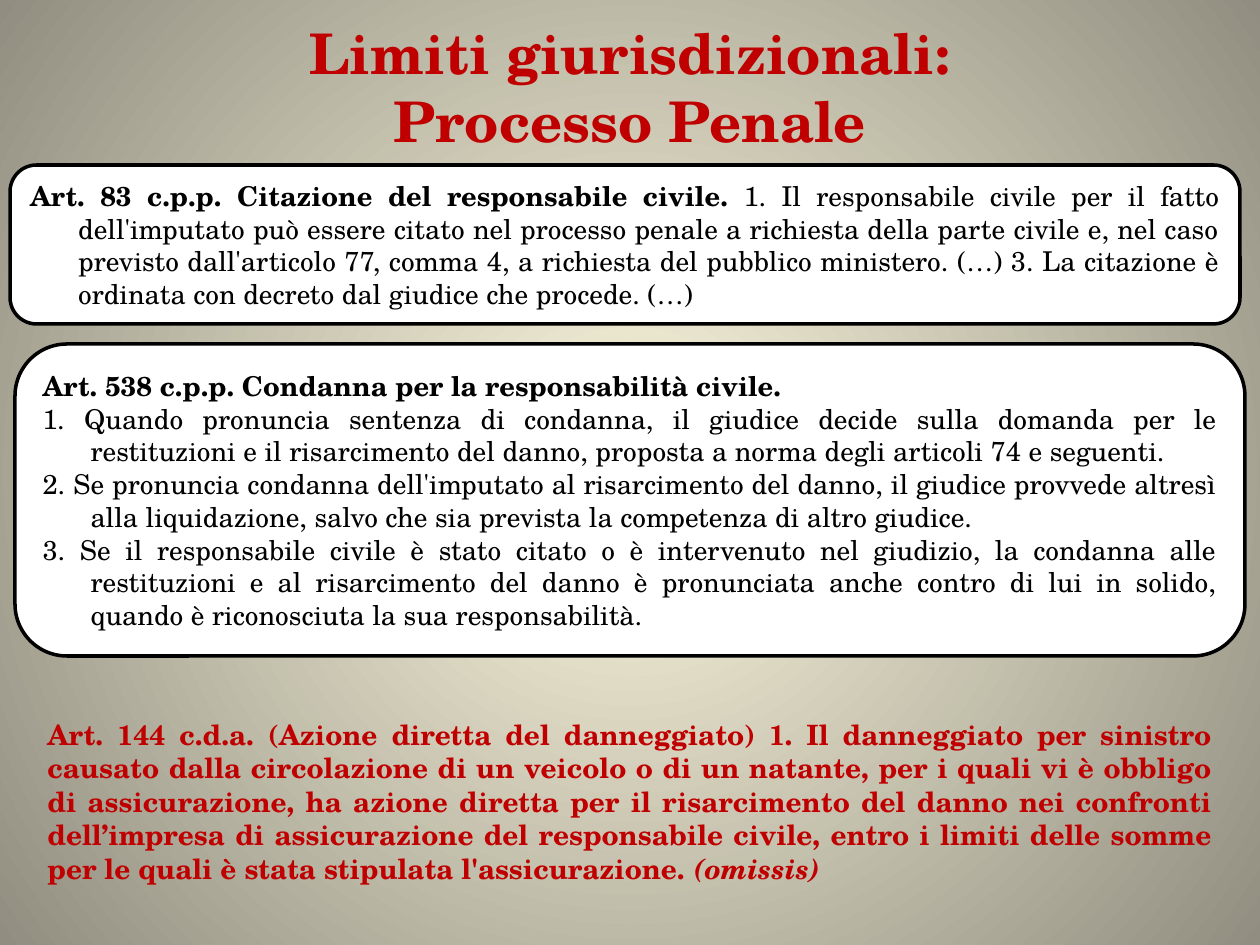
from lxml.etree import SubElement
from pptx import Presentation
from pptx.dml.color import RGBColor
from pptx.enum.shapes import MSO_SHAPE
from pptx.enum.text import MSO_ANCHOR, PP_ALIGN
from pptx.oxml.ns import qn
from pptx.util import Emu, Pt

PX = 914400 / 126
FONT = "TeX Gyre Schola"
RED = RGBColor(0xC0, 0x00, 0x00)
BLACK = RGBColor(0x00, 0x00, 0x00)
WHITE = RGBColor(0xFF, 0xFF, 0xFF)
CREAM = RGBColor(0xFC, 0xF7, 0xDD)
STONE = RGBColor(0x91, 0x8E, 0x81)

ARTICLE_83 = [
    (
        "Art. 83 c.p.p. Citazione del responsabile civile.",
        " 1. Il responsabile civile per il fatto dell'imputato può essere citato nel "
        "processo penale a richiesta della parte civile e, nel caso previsto "
        "dall'articolo 77, comma 4, a richiesta del pubblico ministero. (…) 3. La "
        "citazione è ordinata con decreto dal giudice che procede. (…)",
    ),
]
ARTICLE_538 = [
    ("Art. 538 c.p.p. Condanna per la responsabilità civile.", ""),
    (
        "",
        "1. Quando pronuncia sentenza di condanna, il giudice decide sulla domanda "
        "per le restituzioni e il risarcimento del danno, proposta a norma degli "
        "articoli 74 e seguenti.",
    ),
    (
        "",
        "2. Se pronuncia condanna dell'imputato al risarcimento del danno, il giudice "
        "provvede altresì alla liquidazione, salvo che sia prevista la competenza di "
        "altro giudice.",
    ),
    (
        "",
        "3. Se il responsabile civile è stato citato o è intervenuto nel giudizio, la "
        "condanna alle restituzioni e al risarcimento del danno è pronunciata anche "
        "contro di lui in solido, quando è riconosciuta la sua responsabilità.",
    ),
]
ARTICLE_144 = (
    "Art. 144 c.d.a. (Azione diretta del danneggiato) 1. Il danneggiato per sinistro "
    "causato dalla circolazione di un veicolo o di un natante, per i quali vi è "
    "obbligo di assicurazione, ha azione diretta per il risarcimento del danno nei "
    "confronti dell’impresa di assicurazione del responsabile civile, entro i limiti "
    "delle somme per le quali è stata stipulata l'assicurazione. "
)


def px(length):
    return Emu(round(length * PX))


def format_paragraph(paragraph, size, color, alignment):
    paragraph.alignment = alignment
    paragraph.font.name = FONT
    paragraph.font.size = Pt(size)
    paragraph.font.color.rgb = color


def add_run(paragraph, text, bold=None, italic=None):
    run = paragraph.add_run()
    run.text = text
    run.font.bold = bold
    run.font.italic = italic


def paint_background(slide):
    fill = slide.background.fill
    fill.gradient()
    for stop, color in zip(fill.gradient_stops, (CREAM, STONE)):
        stop.color.rgb = color
    gradient = slide.element.find(".//" + qn("a:gradFill"))
    gradient.remove(gradient.find(qn("a:lin")))
    circle = SubElement(gradient, qn("a:path"), path="circle")
    SubElement(circle, qn("a:fillToRect"), l="50000", t="50000", r="50000", b="50000")


def add_title(slide, left, top, width, height):
    shape = slide.shapes.add_textbox(px(left), px(top), px(width), px(height))
    frame = shape.text_frame
    frame.word_wrap = True
    frame.vertical_anchor = MSO_ANCHOR.MIDDLE
    frame.margin_bottom = px(67)
    paragraph = frame.paragraphs[0]
    paragraph.text = "Limiti giurisdizionali:\vProcesso Penale"
    format_paragraph(paragraph, 32, RED, PP_ALIGN.CENTER)
    paragraph.font.bold = True


def add_article_card(slide, left, top, width, height, article):
    shape = slide.shapes.add_shape(
        MSO_SHAPE.ROUNDED_RECTANGLE, px(left), px(top), px(width), px(height)
    )
    shape.shadow.inherit = False
    shape.fill.solid()
    shape.fill.fore_color.rgb = WHITE
    shape.line.color.rgb = BLACK
    shape.line.width = Pt(2)
    frame = shape.text_frame
    frame.word_wrap = True
    frame.vertical_anchor = MSO_ANCHOR.MIDDLE
    for index, (heading, body) in enumerate(article):
        paragraph = frame.add_paragraph() if index else frame.paragraphs[0]
        format_paragraph(paragraph, 15.6, BLACK, PP_ALIGN.JUSTIFY)
        properties = paragraph._p.get_or_add_pPr()
        properties.set("marL", str(px(48)))
        properties.set("indent", str(-px(48)))
        if heading:
            add_run(paragraph, heading, bold=True)
        if body:
            add_run(paragraph, body)


def add_direct_action(slide, left, top, width, height):
    shape = slide.shapes.add_textbox(px(left), px(top), px(width), px(height))
    frame = shape.text_frame
    frame.word_wrap = True
    paragraph = frame.paragraphs[0]
    format_paragraph(paragraph, 16, RED, PP_ALIGN.JUSTIFY)
    paragraph.font.bold = True
    add_run(paragraph, ARTICLE_144)
    add_run(paragraph, "(omissis)", italic=True)


def main():
    presentation = Presentation()
    presentation.slide_width = px(1260)
    presentation.slide_height = px(945)
    slide = presentation.slides.add_slide(presentation.slide_layouts[6])
    paint_background(slide)
    add_title(slide, 63, 38, 1134, 157)
    add_article_card(slide, 15, 344, 1230, 312, ARTICLE_538)
    add_direct_action(slide, 35, 711, 1190, 234)
    add_article_card(slide, 10, 165, 1230, 159, ARTICLE_83)
    presentation.save("out.pptx")


if __name__ == "__main__":
    main()
